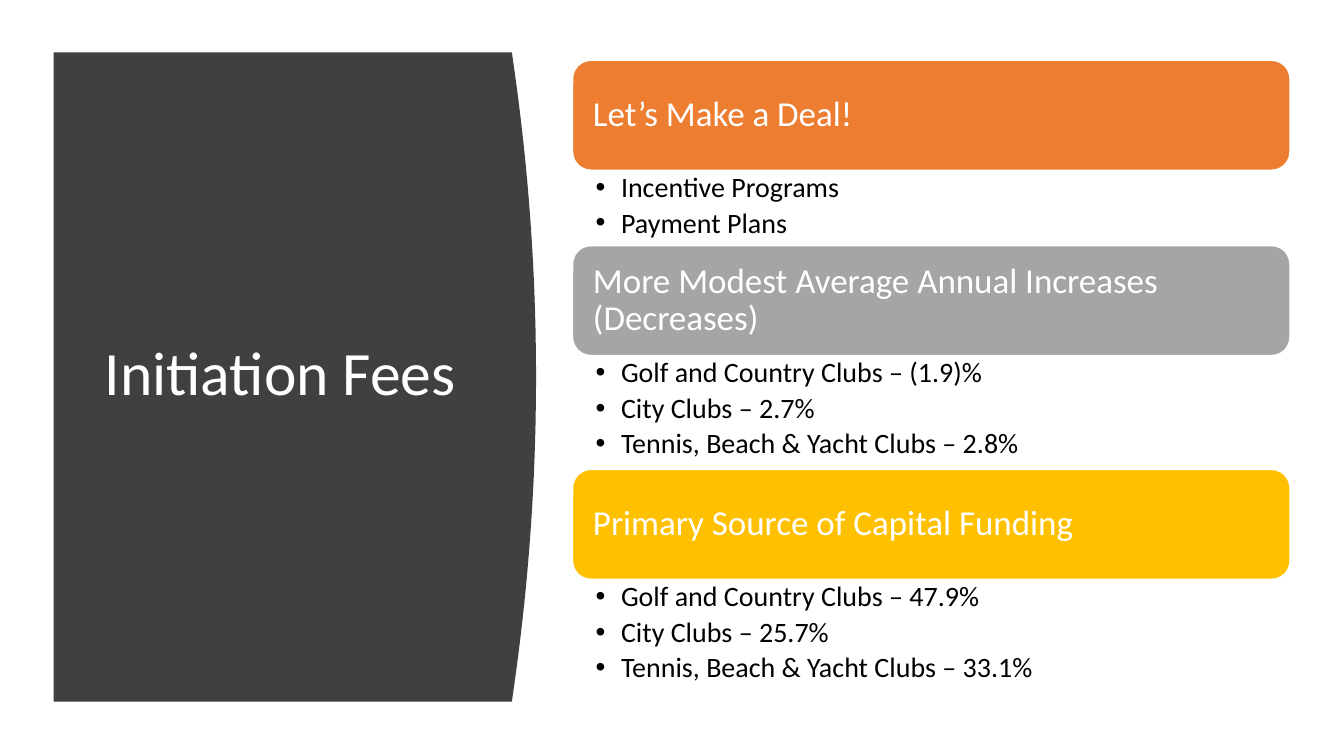
from dataclasses import dataclass

import pptx
import pptx.dml.color
import pptx.enum.shapes
import pptx.enum.text
import pptx.oxml
import pptx.oxml.ns
import pptx.util

Cm = pptx.util.Cm
Pt = pptx.util.Pt
Color = pptx.dml.color.RGBColor.from_string
Anchor = pptx.enum.text.MSO_ANCHOR


@dataclass(frozen=True)
class Theme:
    font: str = "Calibri"
    title_size: int = 44
    heading_size: int = 25
    bullet_size: int = 20
    light: str = "FFFFFF"
    dark: str = "000000"
    panel: str = "404040"
    accents: tuple = ("ED7D31", "A5A5A5", "FFC000")


SECTIONS = [
    ("Let’s Make a Deal!", ["Incentive Programs", "Payment Plans"]),
    ("More Modest Average Annual Increases (Decreases)",
     ["Golf and Country Clubs – (1.9)%", "City Clubs – 2.7%",
      "Tennis, Beach & Yacht Clubs – 2.8%"]),
    ("Primary Source of Capital Funding",
     ["Golf and Country Clubs – 47.9%", "City Clubs – 25.7%",
      "Tennis, Beach & Yacht Clubs – 33.1%"]),
]
COLUMN_LEFT, COLUMN_TOP, COLUMN_WIDTH = 14.43, 1.52, 18.08
HEADING_HEIGHT = 2.77
LIST_HEIGHTS = {2: 1.9, 3: 2.87}


class SlideBuilder:
    def __init__(self, slide, theme):
        self.slide = slide
        self.theme = theme

    def place(self, shape, left, top, width, height):
        shape.left, shape.top = Cm(left), Cm(top)
        shape.width, shape.height = Cm(width), Cm(height)

    def set_frame(self, frame, anchor, horizontal, vertical):
        frame.word_wrap = True
        frame.auto_size = pptx.enum.text.MSO_AUTO_SIZE.NONE
        frame.vertical_anchor = anchor
        frame.margin_left = frame.margin_right = Cm(horizontal)
        frame.margin_top = frame.margin_bottom = Cm(vertical)

    def style(self, paragraph, size, color, space_after=0.0):
        paragraph.alignment = pptx.enum.text.PP_ALIGN.LEFT
        paragraph.line_spacing = 0.9
        paragraph.space_before = Pt(0)
        paragraph.space_after = Pt(space_after)
        font = paragraph.font
        font.name, font.size, font.bold = self.theme.font, Pt(size), False
        font.color.rgb = Color(color)

    def add_panel(self, left, top, shoulder, height, bulge, steps=40):
        """Draw a panel whose right side bows out as a parabola."""
        edge = []
        for step in range(steps + 1):
            offset = 2 * step / steps - 1
            edge.append((Cm(shoulder + bulge * (1 - offset ** 2)),
                         Cm(top + height * step / steps)))
        builder = self.slide.shapes.build_freeform(Cm(left), Cm(top))
        builder.add_line_segments(edge + [(Cm(left), Cm(top + height))])
        panel = builder.convert_to_shape()
        panel.shadow.inherit = False
        panel.fill.solid()
        panel.fill.fore_color.rgb = Color(self.theme.panel)
        panel.line.fill.background()
        self.slide.shapes.title.element.addprevious(panel.element)

    def set_title(self, text, left, top, width, height):
        title = self.slide.shapes.title
        self.place(title, left, top, width, height)
        title.text_frame.text = text
        self.set_frame(title.text_frame, Anchor.MIDDLE, 0.25, 0.13)
        self.style(title.text_frame.paragraphs[0],
                   self.theme.title_size, self.theme.light)

    def add_heading(self, text, color, top):
        heading = self.slide.shapes.add_shape(
            pptx.enum.shapes.MSO_SHAPE.ROUNDED_RECTANGLE, Cm(COLUMN_LEFT),
            Cm(top), Cm(COLUMN_WIDTH), Cm(HEADING_HEIGHT))
        heading.shadow.inherit = False
        heading.fill.solid()
        heading.fill.fore_color.rgb = Color(color)
        heading.line.color.rgb = Color(self.theme.light)
        heading.line.width = Pt(1)
        heading.text_frame.text = text
        self.set_frame(heading.text_frame, Anchor.MIDDLE, 0.38, 0.38)
        self.style(heading.text_frame.paragraphs[0],
                   self.theme.heading_size, self.theme.light)

    def fill_list(self, placeholder, items, top, height):
        self.place(placeholder, COLUMN_LEFT, top, COLUMN_WIDTH, height)
        frame = placeholder.text_frame
        frame.text = "\n".join(items)
        self.set_frame(frame, Anchor.TOP, 0.58, 0.08)
        for paragraph in frame.paragraphs:
            self.add_bullet(paragraph)
            self.style(paragraph, self.theme.bullet_size,
                       self.theme.dark, 3.75)

    def add_bullet(self, paragraph):
        properties = paragraph._p.get_or_add_pPr()
        indent = Cm(0.64)
        properties.set("marL", str(indent))
        properties.set("indent", str(-indent))
        namespace = pptx.oxml.ns.nsdecls("a")
        for tag in ('buFont {} typeface="Arial"', 'buChar {} char="•"'):
            properties.append(
                pptx.oxml.parse_xml(f"<a:{tag.format(namespace)}/>"))


def main():
    presentation = pptx.Presentation()
    presentation.slide_width, presentation.slide_height = Cm(33.87), Cm(19.05)
    # The comparison layout offers several body placeholders.
    slide = presentation.slides.add_slide(presentation.slide_layouts[4])
    theme = Theme()
    builder = SlideBuilder(slide, theme)
    builder.add_panel(1.35, 1.32, 12.9, 16.36, 0.61)
    builder.set_title("Initiation Fees", 2.39, 2.82, 9.5, 13.31)

    bodies = [shape for shape in slide.placeholders
              if shape.placeholder_format.idx in (1, 2, 3, 4)]
    top = COLUMN_TOP
    for (heading, items), color, body in zip(SECTIONS, theme.accents, bodies):
        height = LIST_HEIGHTS[len(items)]
        builder.add_heading(heading, color, top)
        builder.fill_list(body, items, top + HEADING_HEIGHT, height)
        top += HEADING_HEIGHT + height
    for spare in bodies[len(SECTIONS):]:
        spare.element.getparent().remove(spare.element)
    presentation.save("out.pptx")


if __name__ == "__main__":
    main()
